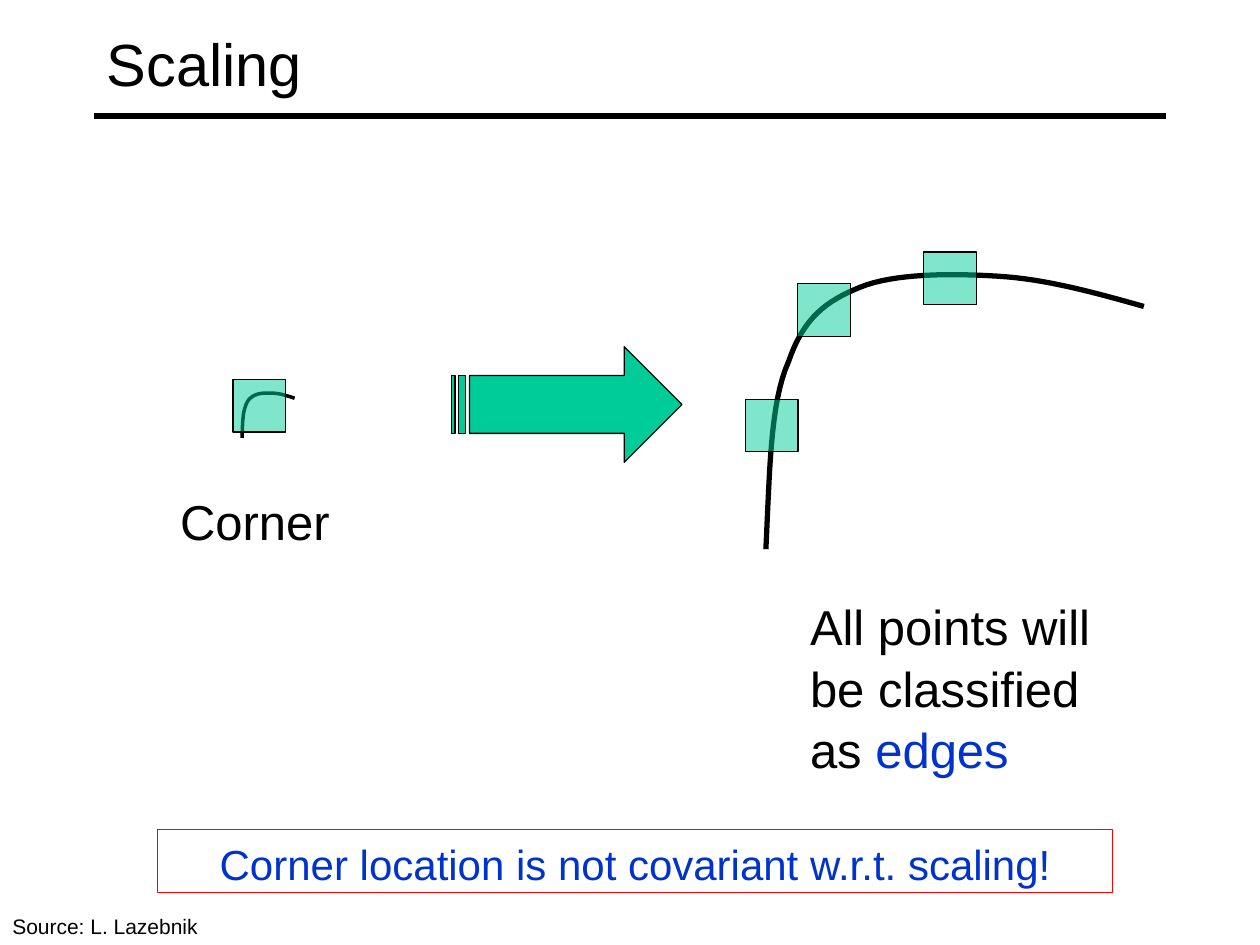
from dataclasses import dataclass

from lxml import etree
from pptx import Presentation
from pptx import util as u
from pptx.dml.color import RGBColor
from pptx.enum import shapes, text
from pptx.oxml import ns


@dataclass(frozen=True)
class Theme:
    font: str = "Arial"
    ink: str = "000000"
    accent: str = "0033CC"
    green: str = "00CC99"
    red: str = "FF0000"
    title: int = 34
    label: int = 28
    banner: int = 24
    source: int = 12
    thin: float = 0.75
    line_spacing: float = 1.05


THEME = Theme()
WINDOW = 1.06  # side of the detection window, in cm

# Contour in a unit box: a start point, then cubic Bézier triples
CONTOUR_START = (0, 1)
CONTOUR = [
    [(0.01, 0.74), (0.01, 0.47), (0.06, 0.32)],
    [(0.1, 0.16), (0.16, 0.1), (0.25, 0.05)],
    [(0.34, 0), (0.49, 0), (0.61, 0.01)],
    [(0.74, 0.02), (0.87, 0.07), (1, 0.12)],
]


def contour_points(steps=16):
    """Sample the contour's Bézier pieces as points in the unit box."""
    points = [CONTOUR_START]
    for b, c, d in CONTOUR:
        a = points[-1]
        for step in range(1, steps + 1):
            t = step / steps
            s = 1 - t
            weights = (s**3, 3 * s * s * t, 3 * s * t * t, t**3)
            points.append(tuple(
                sum(w * p[axis] for w, p in zip(weights, (a, b, c, d)))
                for axis in (0, 1)))
    return points


def set_line(shape, color, width):
    shape.line.color.rgb = RGBColor.from_string(color)
    shape.line.width = u.Pt(width)


def set_font(font, size, color):
    font.name = THEME.font
    font.size = u.Pt(size)
    font.color.rgb = RGBColor.from_string(color)


def add_label(slide, left, top, width, height, wording, size, color=THEME.ink):
    """Add a wrapped text box and return it."""
    shape = slide.shapes.add_textbox(*map(u.Cm, (left, top, width, height)))
    shape.text_frame.word_wrap = True
    paragraph = shape.text_frame.paragraphs[0]
    paragraph.add_run().text = wording
    set_font(paragraph.font, size, color)
    if size != THEME.source:
        paragraph.line_spacing = THEME.line_spacing
    return shape


def add_contour(slide, left, top, width, height, weight):
    points = [(u.Cm(left + x * width), u.Cm(top + y * height))
              for x, y in contour_points()]
    builder = slide.shapes.build_freeform(*points[0])
    builder.add_line_segments(points[1:], close=False)
    shape = builder.convert_to_shape()
    shape.shadow.inherit = False
    shape.fill.background()
    set_line(shape, THEME.ink, weight)


def add_green_shape(slide, kind, left, top, width, height):
    shape = slide.shapes.add_shape(kind, *map(u.Cm, (left, top, width, height)))
    shape.shadow.inherit = False
    shape.fill.solid()
    shape.fill.fore_color.rgb = RGBColor.from_string(THEME.green)
    set_line(shape, THEME.ink, THEME.thin)
    return shape


def add_window(slide, left, top):
    """Add a half-transparent detection window."""
    shape = add_green_shape(slide, shapes.MSO_SHAPE.RECTANGLE,
                            left, top, WINDOW, WINDOW)
    color = shape.fill._xPr.find(".//" + ns.qn("a:srgbClr"))
    etree.SubElement(color, ns.qn("a:alpha"), val="50000")


def add_heading(slide, left, top, width, height):
    rule = slide.shapes.add_connector(
        shapes.MSO_CONNECTOR.STRAIGHT, u.Cm(left), u.Cm(top + height),
        u.Cm(left + width), u.Cm(top + height))
    set_line(rule, THEME.ink, 3)
    etree.SubElement(rule._element.spPr, ns.qn("a:effectLst"))

    title = slide.shapes.title
    title.left, title.top = u.Cm(left), u.Cm(top)
    title.width, title.height = u.Cm(width), u.Cm(height)
    title.text_frame.text = "Scaling"
    title.text_frame.vertical_anchor = text.MSO_ANCHOR.MIDDLE
    paragraph = title.text_frame.paragraphs[0]
    paragraph.alignment = text.PP_ALIGN.LEFT
    set_font(paragraph.font, THEME.title, THEME.ink)


def add_small_scene(slide, left, top, width):
    add_contour(slide, left + 1.5, top + 0.27, 1.06, 0.91, weight=2)
    add_window(slide, left + 1.32, top)
    add_label(slide, left, top + 2.08, width, 1.45, "Corner", THEME.label)


def add_large_scene(slide, left, top):
    add_contour(slide, left + 0.41, top + 0.43, 7.62, 5.56, weight=3)
    for x, y in [(3.59, 0), (1.05, 0.64), (0, 2.97)]:
        add_window(slide, left + x, top + y)
    label = add_label(slide, left + 1.05, top + 6.76, 7.19, 3.81,
                      "All points will be classified as ", THEME.label)
    edges = label.text_frame.paragraphs[0].add_run()
    edges.text = "edges"
    edges.font.color.rgb = RGBColor.from_string(THEME.accent)


def add_banner(slide, left, top, width, height):
    banner = add_label(slide, left, top, width, height,
                       "Corner location is not covariant w.r.t. scaling!",
                       THEME.banner, THEME.accent)
    banner.text_frame.paragraphs[0].alignment = text.PP_ALIGN.CENTER
    set_line(banner, THEME.red, THEME.thin)


def main():
    presentation = Presentation()
    presentation.slide_width = u.Cm(25.4)
    presentation.slide_height = u.Cm(19.05)
    slide = presentation.slides.add_slide(presentation.slide_layouts[5])

    add_heading(slide, 1.9, 0.2, 21.6, 2.14)
    add_small_scene(slide, 3.38, 7.65, 4.45)
    add_green_shape(slide, shapes.MSO_SHAPE.STRIPED_RIGHT_ARROW,
                    9.1, 6.99, 4.65, 2.33)
    add_large_scene(slide, 15.03, 5.08)
    add_banner(slide, 3.18, 16.72, 19.25, 1.27)
    add_label(slide, 0, 18.29, 4.9, 0.76, "Source: L. Lazebnik", THEME.source)

    presentation.save("out.pptx")


if __name__ == "__main__":
    main()
